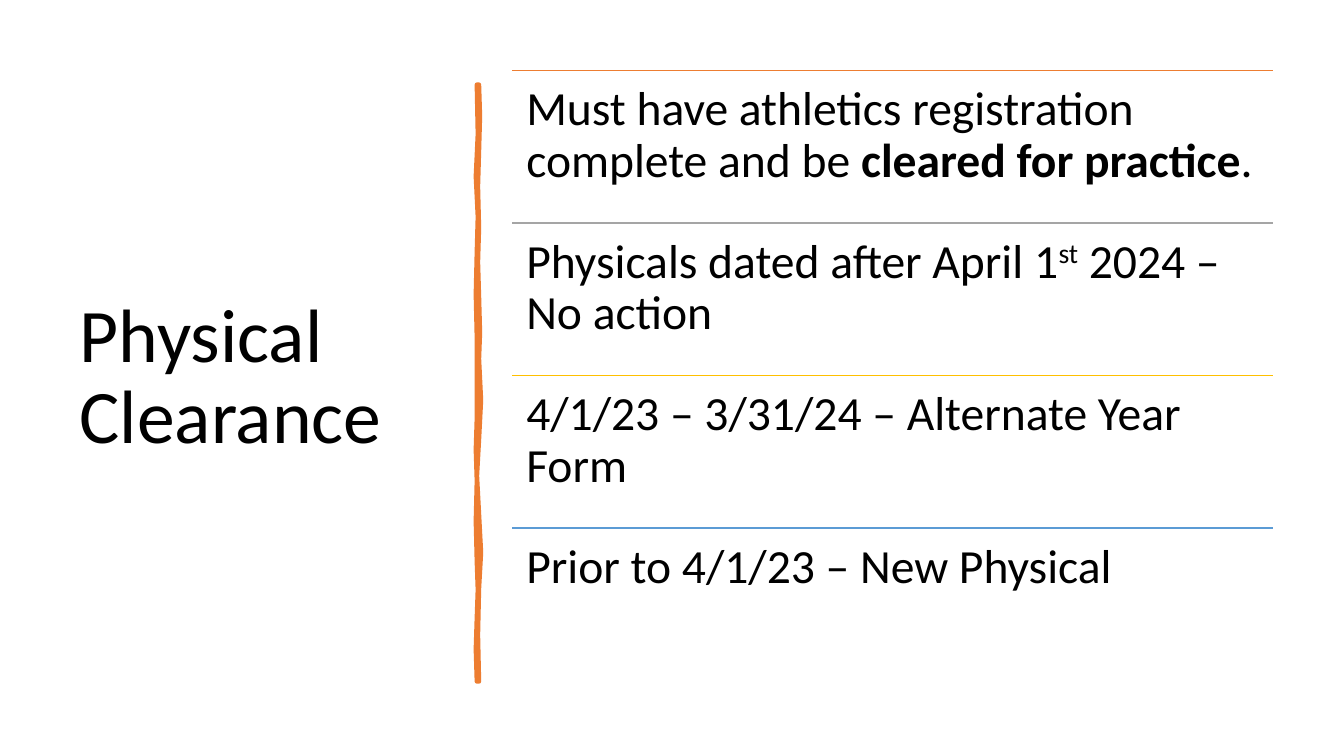
from dataclasses import dataclass

from lxml import etree
from pptx import Presentation
from pptx.dml.color import RGBColor
from pptx.enum.shapes import MSO_CONNECTOR
from pptx.enum.text import MSO_ANCHOR, MSO_AUTO_SIZE, PP_ALIGN
from pptx.oxml.ns import qn
from pptx.util import Inches, Pt

STRAIGHT = MSO_CONNECTOR.STRAIGHT
TOP, MIDDLE = MSO_ANCHOR.TOP, MSO_ANCHOR.MIDDLE
NO_FIT = MSO_AUTO_SIZE.NONE
LEFT = PP_ALIGN.LEFT


@dataclass(frozen=True)
class Theme:
    font: str = "Calibri"
    ink: str = "000000"
    brush: str = "ED7D31"
    rules: tuple = ("ED7D31", "A5A5A5", "FFC000", "5B9BD5")
    title: int = 54
    body: int = 34


# Each item is a list of (text, style) runs
ITEMS = [
    [("Must have athletics registration complete and be ", ""),
     ("cleared for practice", "bold"), (".", "")],
    [("Physicals dated after April 1", ""), ("st", "super"),
     (" 2024 – No action", "")],
    [("4/1/23 – 3/31/24 – Alternate Year Form", "")],
    [("Prior to 4/1/23 – New Physical", "")],
]
LIST_X, LIST_Y, LIST_W, LIST_H = 5.08, 0.7, 7.55, 6.05

# Wavy edges of the brush stroke, right side down, then left side up
RIGHT = [(4.75, 0.84), (4.76, 1.15), (4.75, 1.5), (4.74, 1.85), (4.75, 2.26),
         (4.74, 2.6), (4.75, 2.94), (4.76, 3.3), (4.75, 3.56), (4.77, 3.97),
         (4.75, 4.36), (4.73, 4.72), (4.75, 5.1), (4.77, 5.48), (4.75, 5.84),
         (4.74, 6.3), (4.75, 6.76)]
LEFT_EDGE = [(4.73, 6.76), (4.72, 6.44), (4.73, 6.13), (4.74, 5.85),
             (4.73, 5.57), (4.72, 5.17), (4.73, 4.77), (4.72, 4.46),
             (4.73, 4.15), (4.73, 3.75), (4.73, 3.35), (4.72, 2.92),
             (4.73, 2.5), (4.74, 2.15), (4.72, 1.75), (4.74, 1.33),
             (4.73, 0.84)]


class Deck:
    def __init__(self, theme):
        self.theme = theme
        self.prs = Presentation()
        self.prs.slide_width = Inches(13.33)
        self.prs.slide_height = Inches(7.5)
        self.slide = self.prs.slides.add_slide(self.prs.slide_layouts[5])

    def set_text(self, shape, runs, size, anchor):
        frame = shape.text_frame
        frame.word_wrap = True
        frame.auto_size = NO_FIT
        frame.vertical_anchor = anchor
        para = frame.paragraphs[0]
        para.alignment = LEFT
        para.line_spacing = 0.9
        for text, style in runs:
            run = para.add_run()
            run.text = text
            run.font.name = self.theme.font
            run.font.size = Pt(size)
            run.font.color.rgb = RGBColor.from_string(self.theme.ink)
            run.font.bold = style == "bold"
            if style == "super":
                run.font._element.set("baseline", "30000")
        return frame

    def title(self, text, x, y, w, h):
        shape = self.slide.shapes.title
        shape.left, shape.top = Inches(x), Inches(y)
        shape.width, shape.height = Inches(w), Inches(h)
        self.set_text(shape, [(text, "")], self.theme.title, MIDDLE)

    def text(self, runs, x, y, w, h):
        box = self.slide.shapes.add_textbox(
            Inches(x), Inches(y), Inches(w), Inches(h))
        frame = self.set_text(box, runs, self.theme.body, TOP)
        frame.margin_left = frame.margin_right = Inches(0.14)
        frame.margin_top = frame.margin_bottom = Inches(0.14)

    def rule(self, color, x, y, w):
        line = self.slide.shapes.add_connector(
            STRAIGHT, Inches(x), Inches(y), Inches(x + w), Inches(y))
        line.line.color.rgb = RGBColor.from_string(color)
        line.line.width = Pt(1)
        etree.SubElement(line._element.spPr, qn("a:effectLst"))

    def brush(self, points):
        start, *rest = [(Inches(x), Inches(y)) for x, y in points]
        form = self.slide.shapes.build_freeform(*start)
        form.add_line_segments(rest, close=True)
        shape = form.convert_to_shape()
        color = RGBColor.from_string(self.theme.brush)
        shape.shadow.inherit = False
        shape.fill.solid()
        shape.fill.fore_color.rgb = color
        shape.line.color.rgb = color
        shape.line.width = Pt(3.25)


def main():
    theme = Theme()
    deck = Deck(theme)
    deck.title("Physical Clearance", 0.69, 0.7, 3.74, 6.11)
    deck.brush(RIGHT + LEFT_EDGE)
    step = LIST_H / len(ITEMS)
    for i, (runs, color) in enumerate(zip(ITEMS, theme.rules)):
        y = LIST_Y + i * step
        deck.rule(color, LIST_X, y, LIST_W)
        deck.text(runs, LIST_X, y, LIST_W, step)
    deck.prs.save("out.pptx")


if __name__ == "__main__":
    main()
